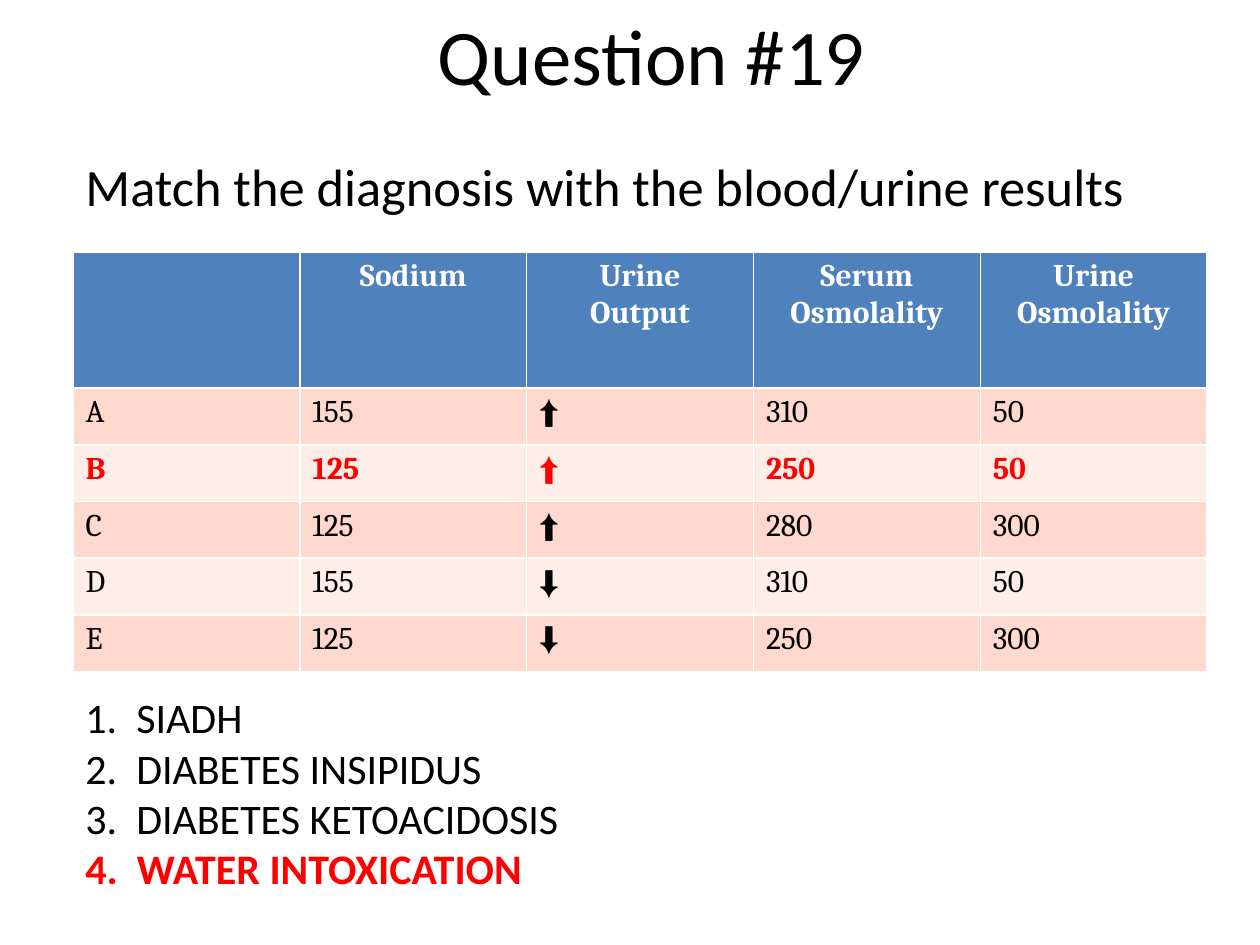
from pptx import Presentation
from pptx import util as u
from pptx.dml.color import RGBColor
from pptx.enum import text

COLORS = {
    "black": "000000", "white": "FFFFFF", "answer": "FF0000",
    "header": "4F81BD", "odd": "FFD9CE", "even": "FFEDE8",
}


def style(para, size, color, name="Calibri", bold=False):
    para.font.size = u.Pt(size)
    para.font.name = name
    para.font.bold = bold
    para.font.color.rgb = RGBColor.from_string(COLORS[color])


def add_text(page, left, top, width, height, lines, size, answer=None):
    box = page.shapes.add_textbox(*map(u.Inches, (left, top, width, height)))
    frame = box.text_frame
    frame.word_wrap = True
    frame.text = "\n".join(lines)
    for para in frame.paragraphs:
        correct = para.text == answer
        style(para, size, "answer" if correct else "black", bold=correct)
    return frame


deck = Presentation()
deck.slide_width, deck.slide_height = u.Inches(10), u.Inches(7.5)
page = deck.slides.add_slide(deck.slide_layouts[5])

# Title
title = page.shapes.title
title.left, title.top = u.Inches(0.67), u.Inches(0)
title.width, title.height = u.Inches(9), u.Inches(1.25)
title.text_frame.text = "Question #19"
title.text_frame.vertical_anchor = text.MSO_ANCHOR.TOP
title.text_frame.auto_size = text.MSO_AUTO_SIZE.NONE
title.text_frame.paragraphs[0].alignment = text.PP_ALIGN.CENTER
style(title.text_frame.paragraphs[0], 45, "black")

# Instruction
add_text(page, 0.58, 1.17, 9.08, 0.61,
         ["Match the diagnosis with the blood/urine results"], 30)

# Results table; the default table style draws the white rules
results = [
    ["", "Sodium", "Urine\nOutput", "Serum Osmolality", "Urine Osmolality"],
    ["A", "155", "⬆", "310", "50"],
    ["B", "125", "⬆", "250", "50"],
    ["C", "125", "⬆", "280", "300"],
    ["D", "155", "⬇", "310", "50"],
    ["E", "125", "⬇", "250", "300"],
]
table = page.shapes.add_table(
    len(results), len(results[0]),
    u.Inches(0.58), u.Inches(2), u.Inches(9), u.Inches(3.35)).table
for row, values in enumerate(results):
    header, correct = row == 0, values[0] == "B"
    table.rows[row].height = u.Inches(1.08 if header else 0.45)
    fill = "header" if header else "odd" if row % 2 else "even"
    color = "white" if header else "answer" if correct else "black"
    for column, value in enumerate(values):
        cell = table.cell(row, column)
        cell.fill.solid()
        cell.fill.fore_color.rgb = RGBColor.from_string(COLORS[fill])
        cell.text = value
        for para in cell.text_frame.paragraphs:
            font = "Arial" if value in ("⬆", "⬇") else "Cambria"
            style(para, 18, color, font, header or correct)
            if header:
                para.alignment = text.PP_ALIGN.CENTER

# Diagnoses
diagnoses = ["1.  SIADH", "2.  DIABETES INSIPIDUS",
             "3.  DIABETES KETOACIDOSIS", "4.  WATER INTOXICATION"]
frame = add_text(page, 0.58, 5.33, 8.17, 1.92, diagnoses, 24, diagnoses[-1])
frame.vertical_anchor = text.MSO_ANCHOR.MIDDLE

deck.save("out.pptx")
